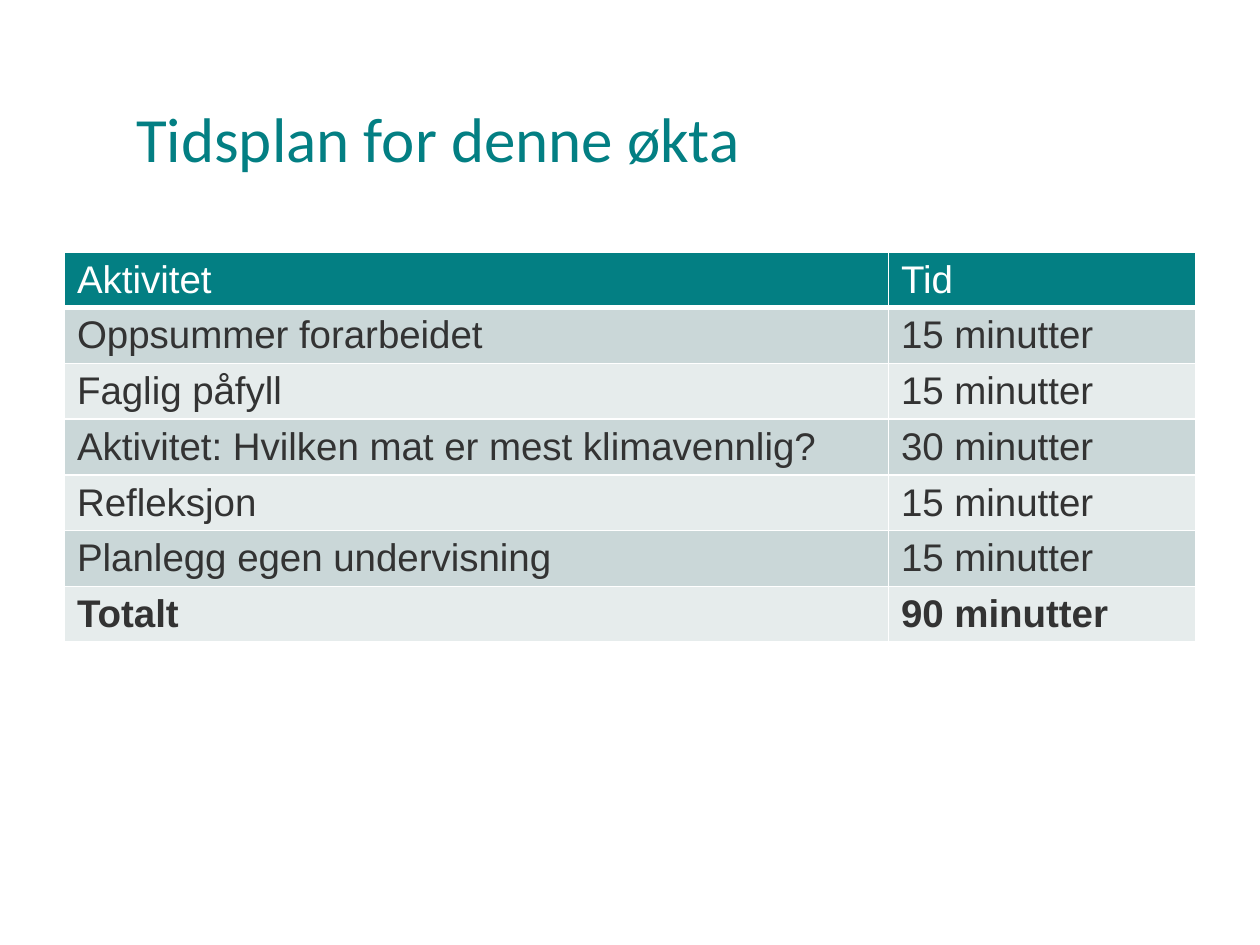
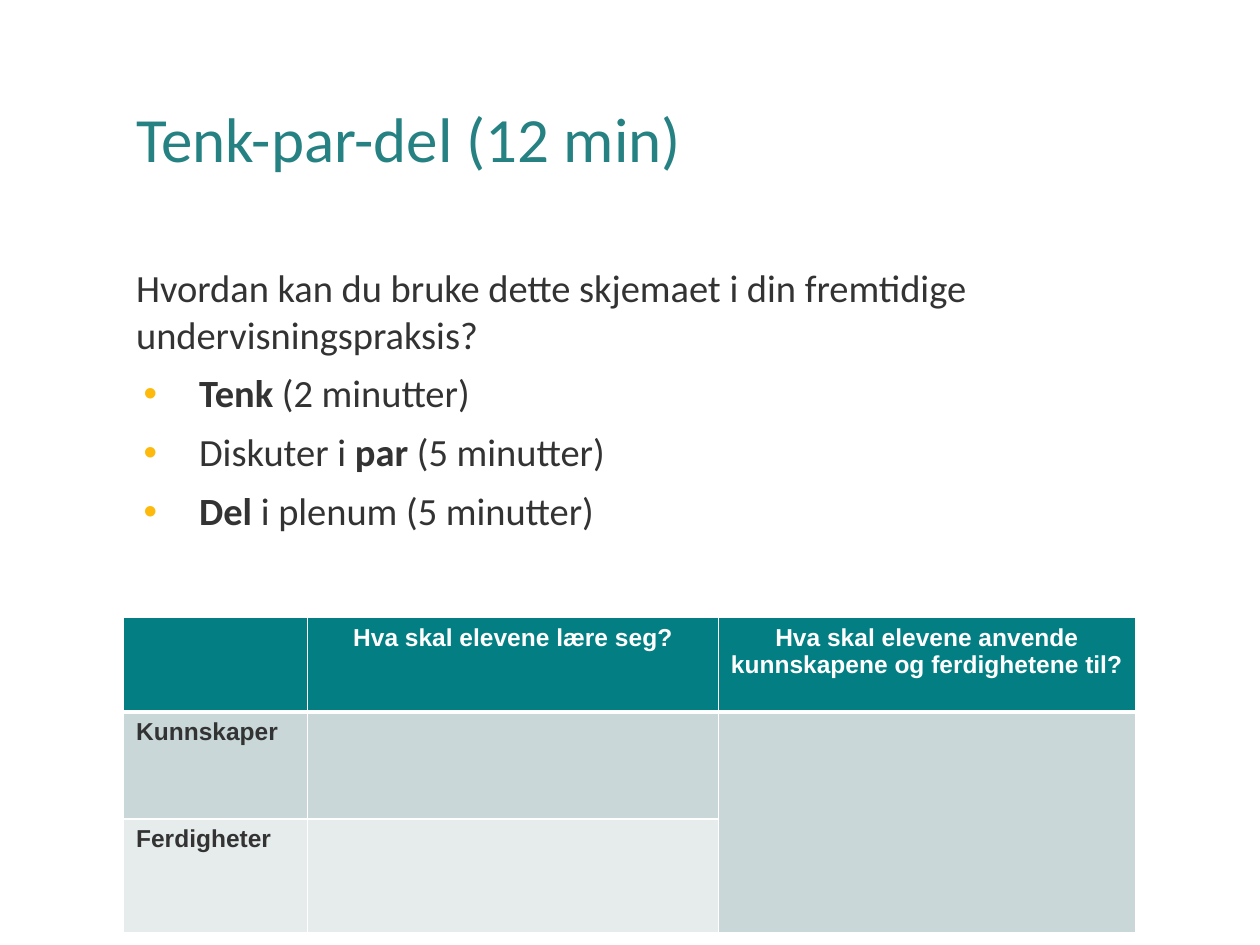
"""Build two workshop slides: a session timetable and a think-pair-share task."""
from lxml.etree import SubElement
from pptx import Presentation
from pptx.dml.color import RGBColor
from pptx.enum.text import MSO_ANCHOR, MSO_AUTO_SIZE, PP_ALIGN
from pptx.oxml.ns import qn
from pptx.util import Cm, Pt

TEAL = "037F83"
SOFT_TEAL = "268183"
DARK = "333333"
WHITE = "FFFFFF"
YELLOW = "FDB90C"
BANDS = ("E6ECEC", "CAD7D8")
TITLE_ONLY, TITLE_AND_BODY = 5, 1
LEFT, TEXT_WIDTH = 2.49, 21.06

TIMETABLE = [
    ("Aktivitet", "Tid"),
    ("Oppsummer forarbeidet", "15 minutter"),
    ("Faglig påfyll", "15 minutter"),
    ("Aktivitet: Hvilken mat er mest klimavennlig?", "30 minutter"),
    ("Refleksjon", "15 minutter"),
    ("Planlegg egen undervisning", "15 minutter"),
    ("Totalt", "90 minutter"),
]
QUESTION = "Hvordan kan du bruke dette skjemaet i din fremtidige undervisningspraksis?"
STEPS = [
    [("Tenk", True), (" (2 minutter)", False)],
    [("Diskuter i ", False), ("par ", True), ("(5 minutter)", False)],
    [("Del", True), (" i plenum (5 minutter)", False)],
]
PLANNING_FORM = [
    ("", "Hva skal elevene lære seg?",
     "Hva skal elevene anvende kunnskapene og ferdighetene til?"),
    ("Kunnskaper", "", ""),
    ("Ferdigheter", "", ""),
]


def rgb(value):
    """Turn a hex string into a colour."""
    return RGBColor.from_string(value)


def style_font(font, name, size, color, bold=None):
    """Set the typeface, size, colour and weight of a font."""
    font.name = name
    font.size = Pt(size)
    font.color.rgb = rgb(color)
    font.bold = bold


def place(shape, left, top, width, height):
    """Position a placeholder, in centimetres, and fix its text size."""
    shape.left, shape.top = Cm(left), Cm(top)
    shape.width, shape.height = Cm(width), Cm(height)
    shape.text_frame.word_wrap = True
    shape.text_frame.auto_size = MSO_AUTO_SIZE.NONE


def add_titled_slide(presentation, layout, title, color):
    """Add a slide with a left-aligned title."""
    slide = presentation.slides.add_slide(presentation.slide_layouts[layout])
    shape = slide.shapes.title
    place(shape, LEFT, 1.02, TEXT_WIDTH, 3.68)
    shape.text_frame.text = title
    shape.text_frame.vertical_anchor = MSO_ANCHOR.MIDDLE
    paragraph = shape.text_frame.paragraphs[0]
    paragraph.alignment = PP_ALIGN.LEFT
    paragraph.line_spacing = 0.9
    style_font(paragraph.font, "Calibri", 36, color)
    return slide


def set_bullet(paragraph, character=None):
    """Give a paragraph a yellow hanging bullet, or none at all."""
    properties = paragraph._p.get_or_add_pPr()
    properties.set("marL", str(Cm(1.27) if character else 0))
    properties.set("indent", str(Cm(-1.12) if character else 0))
    if character:
        color = SubElement(properties, qn("a:buClr"))
        SubElement(color, qn("a:srgbClr"), val=YELLOW)
        SubElement(properties, qn("a:buFont"), typeface="Arial")
        SubElement(properties, qn("a:buChar"), char=character)
    else:
        SubElement(properties, qn("a:buNone"))


def fill_body(shape, question, steps):
    """Write the question and its bulleted steps."""
    place(shape, LEFT, 5.08, TEXT_WIDTH, 11.61)
    frame = shape.text_frame
    frame.margin_top = frame.margin_bottom = Cm(0.25)
    frame.text = question
    paragraph = frame.paragraphs[0]
    set_bullet(paragraph)
    paragraph.space_before = Pt(0)
    style_font(paragraph.font, "Calibri", 22, DARK)
    for step in steps:
        paragraph = frame.add_paragraph()
        set_bullet(paragraph, "•")
        paragraph.line_spacing = 0.9
        paragraph.space_before = Pt(10)
        style_font(paragraph.font, "Calibri", 22, DARK)
        for text, bold in step:
            run = paragraph.add_run()
            run.text = text
            run.font.bold = bold


def set_borders(cell, row):
    """Draw white cell borders, thick between header and body."""
    properties = cell._tc.get_or_add_tcPr()
    widths = {"L": 1, "R": 1, "T": 3 if row == 1 else 1, "B": 3 if row == 0 else 1}
    for side, width in widths.items():
        line = SubElement(properties, qn(f"a:ln{side}"), w=str(Pt(width)))
        fill = SubElement(line, qn("a:solidFill"))
        SubElement(fill, qn("a:srgbClr"), val=WHITE)


def add_banded_table(slide, rows, position, widths, heights, size, is_bold, header_align):
    """Add a table with a teal header and alternating row fills."""
    left, top = position
    frame = slide.shapes.add_table(len(rows), len(widths), Cm(left), Cm(top),
                                   Cm(sum(widths)), Cm(sum(heights)))
    table = frame.table
    for column, width in zip(table.columns, widths):
        column.width = Cm(width)
    for index, (texts, height) in enumerate(zip(rows, heights)):
        table.rows[index].height = Cm(height)
        for cell, text in zip(table.rows[index].cells, texts):
            set_borders(cell, index)
            cell.fill.solid()
            cell.fill.fore_color.rgb = rgb(BANDS[index % 2] if index else TEAL)
            cell.text = text
            paragraph = cell.text_frame.paragraphs[0]
            paragraph.alignment = PP_ALIGN.LEFT if index else header_align
            style_font(paragraph.font, "Arial", size, DARK if index else WHITE, is_bold(index))
    return table


def main():
    """Build and save the presentation."""
    presentation = Presentation()
    presentation.slide_width, presentation.slide_height = Cm(25.4), Cm(19.05)

    slide = add_titled_slide(presentation, TITLE_ONLY, "Tidsplan for denne økta", TEAL)
    total_row = len(TIMETABLE) - 1
    add_banded_table(slide, TIMETABLE, (1.3, 5.08), (16.61, 6.2), [1.12] * len(TIMETABLE),
                     22, lambda row: row == total_row, PP_ALIGN.LEFT)

    slide = add_titled_slide(presentation, TITLE_AND_BODY, "Tenk-par-del (12 min)", SOFT_TEAL)
    fill_body(slide.placeholders[1], QUESTION, STEPS)
    form = add_banded_table(slide, PLANNING_FORM, (LEFT, 12.45), (3.71, 8.28, 8.41),
                            (1.9, 2.16, 2.29), 14, lambda row: True, PP_ALIGN.CENTER)
    form.cell(1, 2).merge(form.cell(2, 2))

    presentation.save("out.pptx")


if __name__ == "__main__":
    main()
